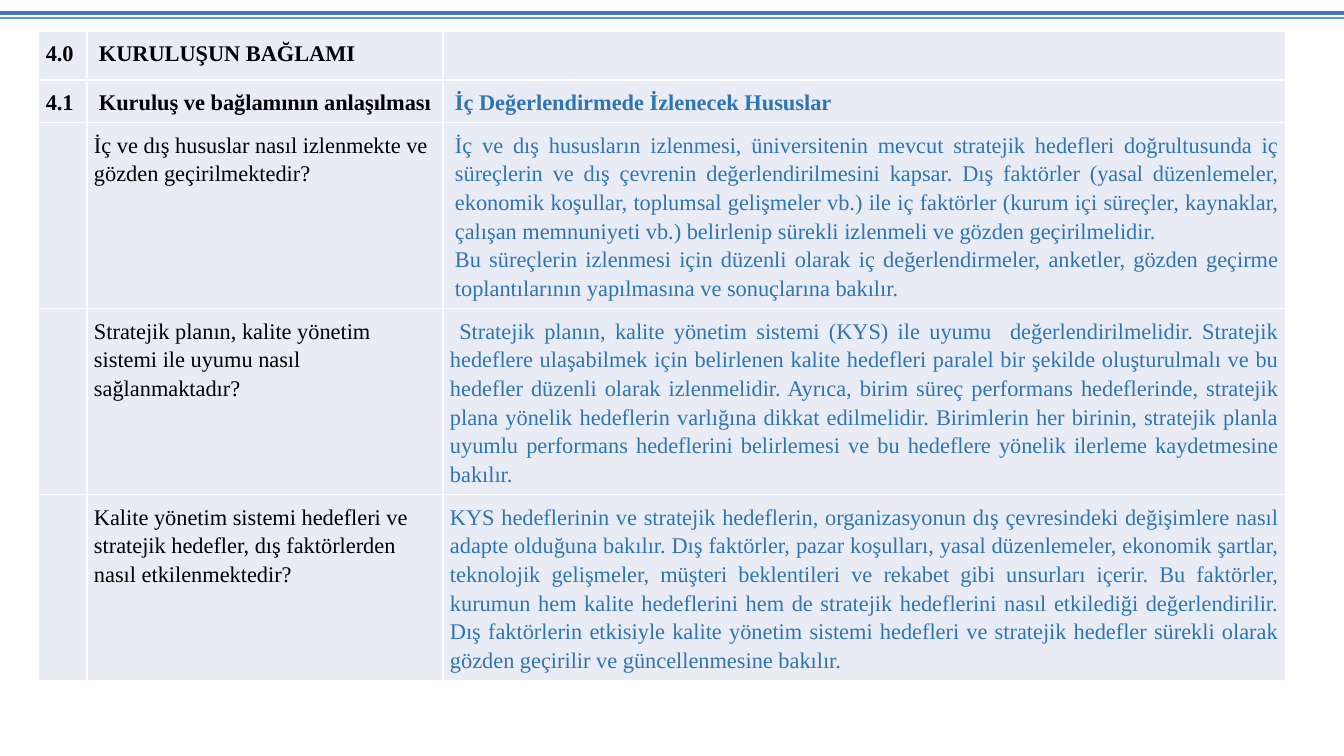
from lxml import etree
from pptx import Presentation
from pptx.dml.color import RGBColor
from pptx.enum.shapes import MSO_CONNECTOR
from pptx.enum.text import PP_ALIGN
from pptx.oxml.ns import qn
from pptx.util import Pt

WIDE, HIGH = 1344, 756
PX = 12192000 / WIDE
FONT = "Times New Roman"
PAD = 7
INDENT = 5

BLACK = RGBColor(0x00, 0x00, 0x00)
BLUE = RGBColor(0x2E, 0x75, 0xB6)
PALE = RGBColor(0xE9, 0xEB, 0xF5)
ROYAL = RGBColor(0x44, 0x72, 0xC4)
SKY = RGBColor(0x5B, 0x9B, 0xD5)

LEFT, MID, JUST = PP_ALIGN.LEFT, PP_ALIGN.CENTER, PP_ALIGN.JUSTIFY
STRAIGHT = MSO_CONNECTOR.STRAIGHT

COLS = [49, 356, 843]
ROWS = [49, 42, 186, 186, 185]

# Column looks: (align, indent, colour, bold)
HEAD = [(MID, 0, BLACK, True), (JUST, INDENT, BLACK, True),
        (JUST, INDENT, BLUE, True)]
BODY = [(MID, 0, BLACK, False), (LEFT, 0, BLACK, False),
        (JUST, 0, BLUE, False)]
INSET = BODY[:2] + [(JUST, INDENT, BLUE, False)]

# Each row: looks, then the paragraphs of each cell
CLAUSES = [
    (HEAD, ["4.0 "], ["KURULUŞUN BAĞLAMI"], []),
    (HEAD, ["4.1 "], ["Kuruluş ve bağlamının anlaşılması"],
     ["İç Değerlendirmede İzlenecek Hususlar"]),
    (INSET, [],
     ["İç ve dış hususlar nasıl izlenmekte ve gözden geçirilmektedir?"],
     ["İç ve dış hususların izlenmesi, üniversitenin mevcut stratejik "
      "hedefleri doğrultusunda iç süreçlerin ve dış çevrenin "
      "değerlendirilmesini kapsar. Dış faktörler (yasal düzenlemeler, "
      "ekonomik koşullar, toplumsal gelişmeler vb.) ile iç faktörler "
      "(kurum içi süreçler, kaynaklar, çalışan memnuniyeti vb.) "
      "belirlenip sürekli izlenmeli ve gözden geçirilmelidir. ",
      "Bu süreçlerin izlenmesi için düzenli olarak iç değerlendirmeler, "
      "anketler, gözden geçirme toplantılarının yapılmasına ve "
      "sonuçlarına bakılır."]),
    (BODY, [],
     ["Stratejik planın, kalite yönetim sistemi ile uyumu nasıl "
      "sağlanmaktadır?"],
     [" Stratejik planın, kalite yönetim sistemi (KYS) ile uyumu  "
      "değerlendirilmelidir. Stratejik hedeflere ulaşabilmek için "
      "belirlenen kalite hedefleri paralel bir şekilde oluşturulmalı ve "
      "bu hedefler düzenli olarak izlenmelidir. Ayrıca, birim süreç "
      "performans hedeflerinde, stratejik plana yönelik hedeflerin "
      "varlığına dikkat edilmelidir. Birimlerin her birinin, stratejik "
      "planla uyumlu performans hedeflerini belirlemesi ve bu hedeflere "
      "yönelik ilerleme kaydetmesine bakılır."]),
    (BODY, [],
     ["Kalite yönetim sistemi hedefleri ve stratejik hedefler, dış "
      "faktörlerden nasıl etkilenmektedir?"],
     ["KYS hedeflerinin ve stratejik hedeflerin, organizasyonun dış "
      "çevresindeki değişimlere nasıl adapte olduğuna bakılır. Dış "
      "faktörler, pazar koşulları, yasal düzenlemeler, ekonomik şartlar, "
      "teknolojik gelişmeler, müşteri beklentileri ve rekabet gibi "
      "unsurları içerir. Bu faktörler, kurumun hem kalite hedeflerini hem "
      "de stratejik hedeflerini nasıl etkilediği değerlendirilir. Dış "
      "faktörlerin etkisiyle kalite yönetim sistemi hedefleri ve "
      "stratejik hedefler sürekli olarak gözden geçirilir ve "
      "güncellenmesine bakılır."]),
]


def emu(px):
    return round(px * PX)


def add_rule(slide, left, top, width, color, weight):
    rule = slide.shapes.add_connector(
        STRAIGHT, emu(left), emu(top), emu(left + width), emu(top))
    rule.line.color.rgb = color
    rule.line.width = Pt(weight)
    etree.SubElement(rule._element.spPr, qn("a:effectLst"))


def add_band(slide, left, top, width):
    """Double rule across the top."""
    add_rule(slide, left, top + 5, width, SKY, 1)
    add_rule(slide, left, top, width, ROYAL, 2.25)


def style_cell(cell):
    cell.margin_left = cell.margin_right = emu(PAD)
    cell.margin_top = cell.margin_bottom = emu(PAD)
    # Borders come before the fill in the cell's XML
    props = cell._tc.get_or_add_tcPr()
    for side in ("lnL", "lnR", "lnT", "lnB"):
        edge = etree.SubElement(props, qn("a:" + side), w=str(Pt(1)))
        fill = etree.SubElement(edge, qn("a:solidFill"))
        etree.SubElement(fill, qn("a:srgbClr"), val="FFFFFF")
    cell.fill.solid()
    cell.fill.fore_color.rgb = PALE


def fill_cell(cell, texts, look):
    align, indent, color, bold = look
    frame = cell.text_frame
    for i, text in enumerate(texts):
        para = frame.add_paragraph() if i else frame.paragraphs[0]
        para.alignment = align
        para.line_spacing = 1.15
        props = para._p.get_or_add_pPr()
        props.set("marL", str(emu(indent)))
        props.set("indent", "0")
        run = para.add_run()
        run.text = text
        run.font.name = FONT
        run.font.size = Pt(16)
        run.font.bold = bold
        run.font.color.rgb = color


def add_clauses(slide, left, top):
    """Table of clauses, questions and guidance."""
    table = slide.shapes.add_table(
        len(ROWS), len(COLS), emu(left), emu(top),
        emu(sum(COLS)), emu(sum(ROWS))).table
    table.first_row = table.horz_banding = False
    for col, width in zip(table.columns, COLS):
        col.width = emu(width)
    for row, height, (looks, *cells) in zip(table.rows, ROWS, CLAUSES):
        row.height = emu(height)
        for cell, texts, look in zip(row.cells, cells, looks):
            style_cell(cell)
            fill_cell(cell, texts, look)


def main():
    deck = Presentation()
    deck.slide_width, deck.slide_height = emu(WIDE), emu(HIGH)
    slide = deck.slides.add_slide(deck.slide_layouts[6])
    add_band(slide, 0, 13, WIDE)
    add_clauses(slide, 38, 31)
    deck.save("out.pptx")


if __name__ == "__main__":
    main()
